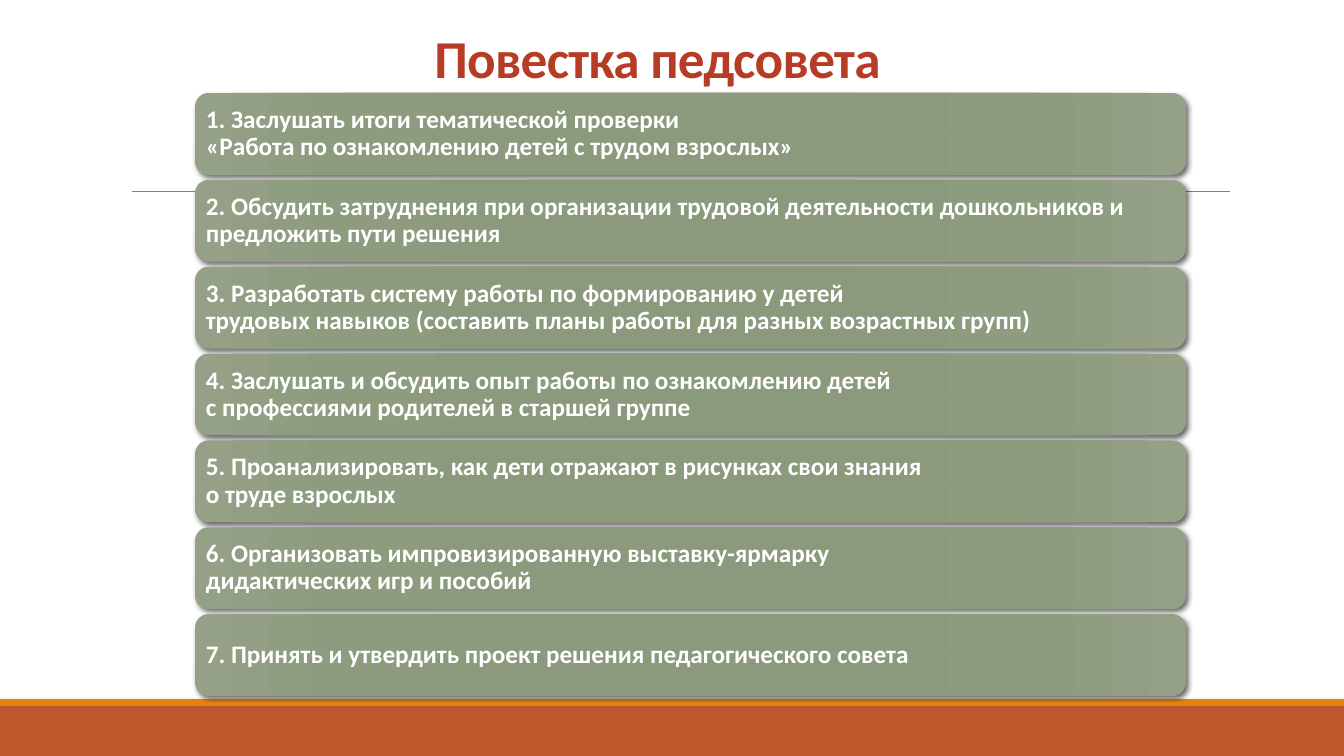
from pptx import Presentation
from pptx import util as u
from pptx.dml.color import RGBColor
from pptx.enum import shapes, text
from pptx.oxml import parse_xml
from pptx.oxml.ns import nsdecls, qn

EMU_PER_PX = 914400 / 100.8
SLIDE_W, SLIDE_H = 1344, 756

WHITE = RGBColor(0xFF, 0xFF, 0xFF)
RED = RGBColor(0xB7, 0x3C, 0x26)
DARK_RED = RGBColor(0x89, 0x2D, 0x1C)
RUST = RGBColor(0xBD, 0x58, 0x2C)
ORANGE = RGBColor(0xE4, 0x83, 0x12)
GREY = RGBColor(0x80, 0x80, 0x80)
GREENS = (
    (0, RGBColor(0x8A, 0x98, 0x7B)),
    (34, RGBColor(0x8B, 0x99, 0x7D)),
    (70, RGBColor(0x8D, 0x9C, 0x7E)),
    (100, RGBColor(0x94, 0xA1, 0x87)),
)
FONT = "Calibri"

AGENDA = (
    "1. Заслушать итоги тематической проверки\n"
    "«Работа по ознакомлению детей с трудом взрослых»",
    "2. Обсудить затруднения при организации трудовой деятельности "
    "дошкольников и предложить пути решения",
    "3. Разработать систему работы по формированию у детей\n"
    "трудовых навыков (составить планы работы для разных возрастных групп)",
    "4. Заслушать и обсудить опыт работы по ознакомлению детей\n"
    "с профессиями родителей в старшей группе",
    "5. Проанализировать, как дети отражают в рисунках свои знания\n"
    "о труде взрослых",
    "6. Организовать импровизированную выставку-ярмарку\n"
    "дидактических игр и пособий",
    "7. Принять и утвердить проект решения педагогического совета",
)


def px(length):
    return u.Emu(round(length * EMU_PER_PX))


def add_bar(slide, left, top, width, height, color):
    bar = slide.shapes.add_shape(shapes.MSO_SHAPE.RECTANGLE,
                                 px(left), px(top), px(width), px(height))
    bar.shadow.inherit = False
    bar.fill.solid()
    bar.fill.fore_color.rgb = color
    bar.line.fill.background()


def add_backdrop(slide, left, top, width, height):
    """Draw the footer bars and the thin rule behind the agenda."""
    bottom = top + height
    add_bar(slide, left, bottom - 50, width, 50, RUST)
    add_bar(slide, left, bottom - 57, width, 7, ORANGE)
    rule = slide.shapes.add_connector(
        shapes.MSO_CONNECTOR.STRAIGHT,
        px(left + 132), px(top + 191), px(left + 1230), px(top + 191))
    rule.line.color.rgb = GREY
    rule.line.width = u.Pt(0.5)
    rule._element.spPr.append(parse_xml(f"<a:effectLst {nsdecls('a')}/>"))


def fill_title(slide, left, top, width, height):
    title = slide.shapes.title
    title.left, title.top = px(left), px(top)
    title.width, title.height = px(width), px(height)
    frame = title.text_frame
    frame.word_wrap = True
    frame.vertical_anchor = text.MSO_ANCHOR.MIDDLE
    heading = frame.paragraphs[0]
    heading.alignment = text.PP_ALIGN.CENTER
    heading.line_spacing = 0.85
    # The larger closing space sets the line height of the heading.
    for wording, size, color in (("Повестка педсовета", 38, RED),
                                 ("\u00a0", 48, DARK_RED)):
        run = heading.add_run()
        run.text = wording
        run.font.name = FONT
        run.font.size = u.Pt(size)
        run.font.bold = True
        run.font.color.rgb = color
        run.font._element.set("spc", "-50")


def shade_card(card):
    """Give a card its radial green gradient and soft shadow."""
    stops = "".join(
        f'<a:gs pos="{position * 1000}"><a:srgbClr val="{color}"/></a:gs>'
        for position, color in GREENS)
    properties = card._element.spPr
    properties.find(qn("a:prstGeom")).addnext(parse_xml(
        f'<a:gradFill {nsdecls("a")} rotWithShape="1"><a:gsLst>{stops}</a:gsLst>'
        '<a:path path="circle"><a:fillToRect l="100000" t="100000" '
        'r="100000" b="100000"/></a:path></a:gradFill>'))
    card.line.fill.background()
    card.shadow.inherit = False
    properties.find(qn("a:effectLst")).append(parse_xml(
        f'<a:outerShdw {nsdecls("a")} blurRad="{u.Pt(3.5)}" dist="{u.Pt(2)}" '
        'dir="2700000" algn="ctr" rotWithShape="0"><a:srgbClr val="000000">'
        '<a:alpha val="60000"/></a:srgbClr></a:outerShdw>'))


def add_card(slide, left, top, width, height, wording):
    card = slide.shapes.add_shape(shapes.MSO_SHAPE.ROUNDED_RECTANGLE,
                                  px(left), px(top), px(width), px(height))
    shade_card(card)
    frame = card.text_frame
    frame.word_wrap = True
    frame.vertical_anchor = text.MSO_ANCHOR.MIDDLE
    frame.margin_left = frame.margin_right = px(7)
    frame.margin_top = frame.margin_bottom = px(7)
    item = frame.paragraphs[0]
    item.text = wording
    item.alignment = text.PP_ALIGN.LEFT
    item.line_spacing = 0.9
    item.font.name = FONT
    item.font.size = u.Pt(18)
    item.font.bold = True
    item.font.color.rgb = WHITE


def add_agenda(slide, left, top, width, height, gap):
    """Stack equal cards, one per item, to fill the box."""
    pitch = (height + gap) / len(AGENDA)
    for index, wording in enumerate(AGENDA):
        add_card(slide, left, top + index * pitch, width, pitch - gap, wording)


def main():
    deck = Presentation()
    deck.slide_width, deck.slide_height = px(SLIDE_W), px(SLIDE_H)
    slide = deck.slides.add_slide(deck.slide_layouts[5])
    add_backdrop(slide, 0, 0, SLIDE_W, SLIDE_H)
    fill_title(slide, 195, 11, 940, 93)
    add_agenda(slide, 195, 93, 991, 603, 5)
    deck.save("out.pptx")


if __name__ == "__main__":
    main()
